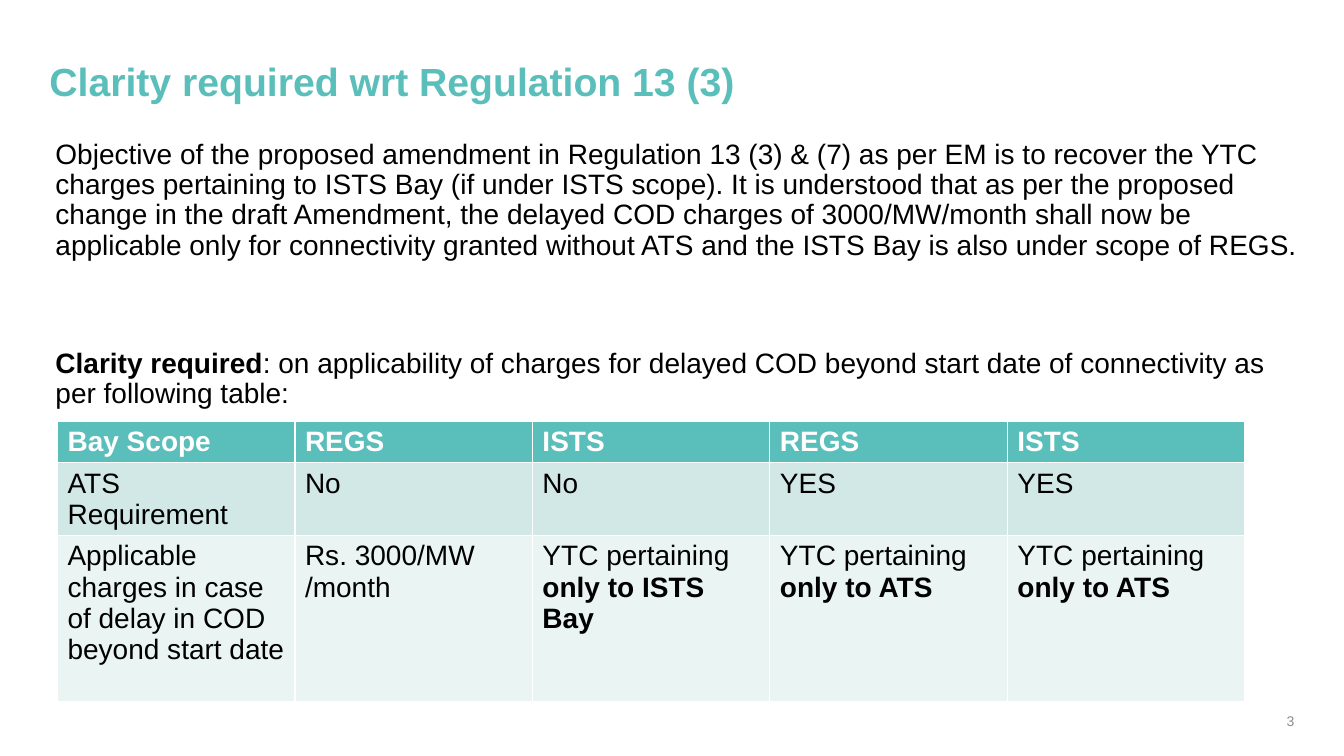
from dataclasses import dataclass

from lxml import etree
from pptx import Presentation
from pptx.dml.color import RGBColor
from pptx.enum.text import MSO_ANCHOR, MSO_AUTO_SIZE, PP_ALIGN
from pptx.oxml.ns import qn
from pptx.util import Pt

LEFT, RIGHT = PP_ALIGN.LEFT, PP_ALIGN.RIGHT
TOP, MIDDLE = MSO_ANCHOR.TOP, MSO_ANCHOR.MIDDLE
NO_FIT = MSO_AUTO_SIZE.NONE

TEAL = RGBColor(0x5A, 0xBE, 0xBA)
MINT = RGBColor(0xD2, 0xE8, 0xE7)
PALE = RGBColor(0xEA, 0xF4, 0xF3)
WHITE = RGBColor(0xFF, 0xFF, 0xFF)
BLACK = RGBColor(0x00, 0x00, 0x00)
GREY = RGBColor(0x8C, 0x8C, 0x8C)


@dataclass(frozen=True)
class Box:
    left: float
    top: float
    width: float
    height: float

    def sides(self) -> tuple:
        return Pt(self.left), Pt(self.top), Pt(self.width), Pt(self.height)


@dataclass(frozen=True)
class Row:
    height: float
    fill: RGBColor
    color: RGBColor
    bold: bool
    cells: tuple


ROWS = (
    Row(29.5, TEAL, WHITE, True, ("Bay Scope", "REGS", "ISTS", "REGS", "ISTS")),
    Row(52, MINT, BLACK, False, ("ATS Requirement", "No", "No", "YES", "YES")),
    Row(118.8, PALE, BLACK, False, (
        "Applicable charges in case of delay in COD beyond start date",
        "Rs. 3000/MW /month",
        "YTC pertaining **only to ISTS Bay**",
        "YTC pertaining **only to ATS**",
        "YTC pertaining **only to ATS**",
    )),
)

GOAL = (
    "Objective of the proposed amendment in Regulation 13 (3) & (7) as per EM is to "
    "recover the YTC charges pertaining to ISTS Bay (if under ISTS scope). It is "
    "understood that as per the proposed change in the draft Amendment, the delayed COD "
    "charges of 3000/MW/month shall now be applicable only for connectivity granted "
    "without ATS and the ISTS Bay is also under scope of REGS."
)
ASK = (
    "**Clarity required**: on applicability of charges for delayed COD beyond start "
    "date of connectivity as per following table:"
)


def write(para, text: str, *, size: float = 20, color: RGBColor = BLACK,
          bold: bool = False, align=LEFT, lines: float = 1.0, space: float = 0) -> None:
    para.alignment = align
    para.line_spacing = lines
    para.space_before = Pt(space)
    for index, part in enumerate(text.split("**")):
        if part:
            run = para.add_run()
            run.text = part
            font = run.font
            font.name = "Arial"
            font.size = Pt(size)
            font.bold = bold or index % 2 == 1
            font.color.rgb = color


def place(shape, box: Box, anchor):
    shape.left, shape.top, shape.width, shape.height = box.sides()
    frame = shape.text_frame
    frame.word_wrap = True
    frame.auto_size = NO_FIT
    frame.vertical_anchor = anchor
    return frame


def plain(para) -> None:
    props = para._p.get_or_add_pPr()
    props.set("marL", "0")
    props.set("indent", "0")
    etree.SubElement(props, qn("a:buNone"))


def add_grid(slide, box: Box, rows: tuple) -> None:
    count = len(rows[0].cells)
    grid = slide.shapes.add_table(len(rows), count, *box.sides()).table
    for column in grid.columns:
        column.width = Pt(box.width / count)
    for line, row in enumerate(rows):
        grid.rows[line].height = Pt(row.height)
        for place_no, text in enumerate(row.cells):
            cell = grid.cell(line, place_no)
            cell.fill.solid()
            cell.fill.fore_color.rgb = row.fill
            write(cell.text_frame.paragraphs[0], text, color=row.color, bold=row.bold)


def main() -> None:
    deck = Presentation()
    deck.slide_width, deck.slide_height = Pt(960), Pt(540)
    slide = deck.slides.add_slide(deck.slide_layouts[1])

    title = place(slide.shapes.title, Box(28.08, 28.08, 903.6, 92.16), MIDDLE)
    title.margin_bottom = Pt(32.6)
    write(title.paragraphs[0], "Clarity required wrt Regulation 13 (3)",
          size=28, color=TEAL, bold=True, lines=0.9)

    body = place(slide.placeholders[1], Box(32.4, 96.48, 903.6, 366.48), TOP)
    for para, text, space in ((body.paragraphs[0], GOAL, 0),
                              (body.add_paragraph(), ASK, 62.7)):
        plain(para)
        write(para, text, lines=0.9, space=space)

    number = slide.shapes.add_textbox(*Box(715.68, 500.4, 216, 28.8).sides())
    frame = place(number, Box(715.68, 500.4, 216, 28.8), MIDDLE)
    write(frame.paragraphs[0], "3", size=10, color=GREY, align=RIGHT)

    add_grid(slide, Box(41.04, 300.96, 848.16, 200.3), ROWS)
    deck.save("out.pptx")


if __name__ == "__main__":
    main()
